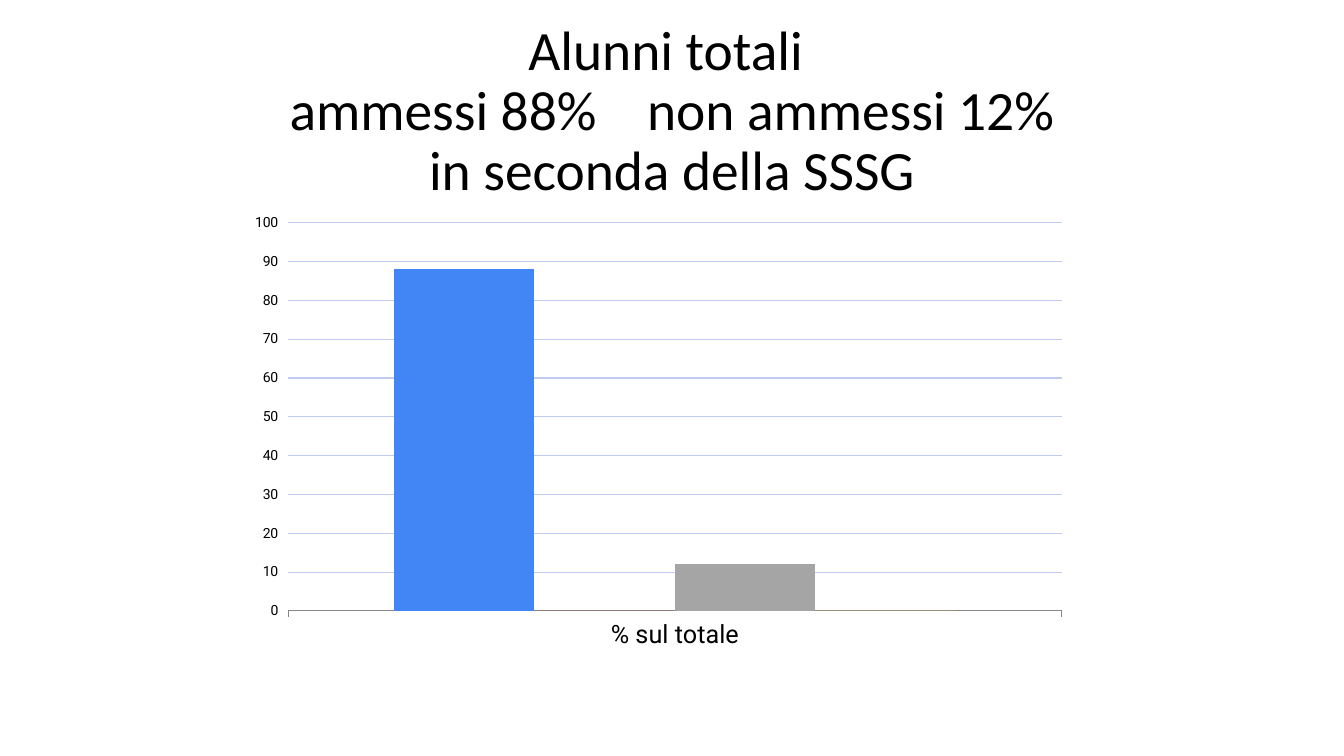
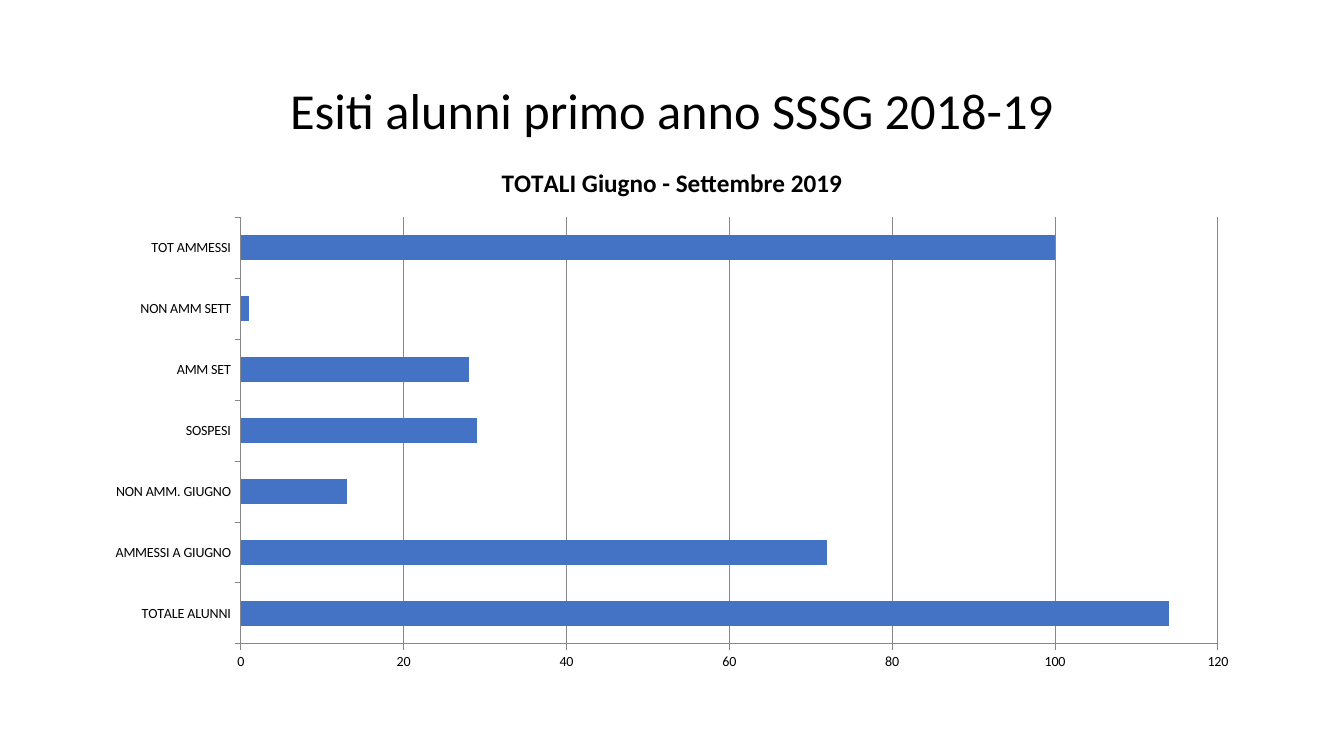
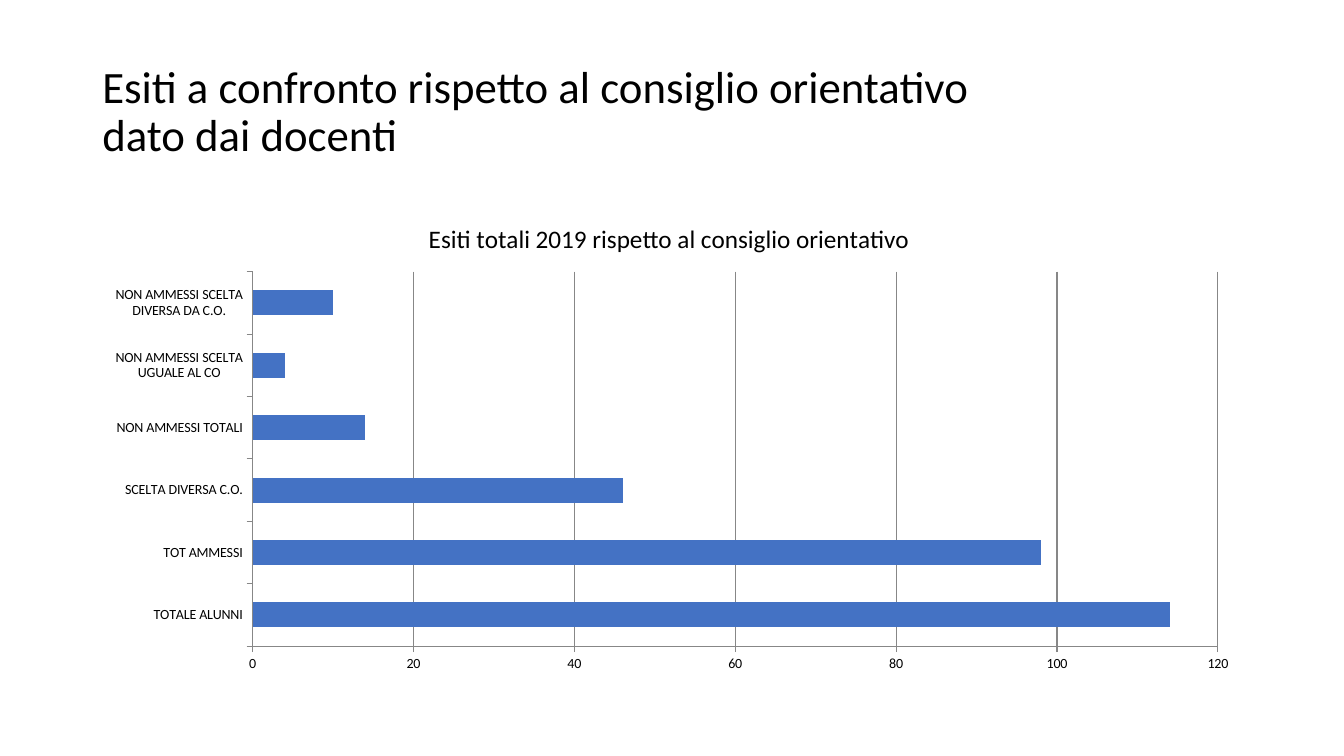
from dataclasses import dataclass

from pptx import Presentation
from pptx.chart.data import CategoryChartData
from pptx.dml.color import RGBColor
from pptx.enum.chart import XL_CHART_TYPE, XL_TICK_MARK
from pptx.enum.text import MSO_ANCHOR, PP_ALIGN
from pptx.util import Pt

COLUMN, BAR = XL_CHART_TYPE.COLUMN_CLUSTERED, XL_CHART_TYPE.BAR_CLUSTERED
OUTSIDE = XL_TICK_MARK.OUTSIDE
LEFT, CENTER = PP_ALIGN.LEFT, PP_ALIGN.CENTER
MIDDLE = MSO_ANCHOR.MIDDLE
PX = 9525


@dataclass(frozen=True)
class Theme:
    font: str = "Calibri"
    column_font: str = "Roboto"
    ink: str = "000000"
    axis: str = "878787"
    column_grid: str = "C0CBF0"
    column_fills: tuple = ("4285F4", "DB4437", "A5A5A5", "FFC000")
    bar_fills: tuple = ("4472C4",)
    label_size: int = 10
    heading_size: int = 18
    line_width: float = 0.75
    line_spacing: float = 0.9
    gap_spacing: int = 2700


T = Theme()


def style_font(font, size, name=T.font, bold=False):
    font.name, font.size, font.bold = name, Pt(size), bold
    font.color.rgb = RGBColor.from_string(T.ink)


def add_text(s, text, *, box, size, align):
    sp = s.shapes.add_textbox(*(n * PX for n in box))
    tf = sp.text_frame
    tf.word_wrap, tf.vertical_anchor = True, MIDDLE
    p = tf.paragraphs[0]
    p.alignment, p.line_spacing = align, T.line_spacing
    for i, line in enumerate(text.split("\n")):
        if i:
            p.add_line_break()
        for j, part in enumerate(line.split("\t")):
            if j:
                gap = p.add_run()
                gap.text = " "
                style_font(gap.font, size)
                gap._r.get_or_add_rPr().set("spc", str(T.gap_spacing))
            r = p.add_run()
            r.text = part
            style_font(r.font, size)


TITLE_BOX = (88, 38, 1104, 139)
slides = [
    dict(title="Alunni totali \nammessi 88%\tnon ammessi 12%\nin seconda della SSSG",
         size=39.6, align=CENTER, kind=COLUMN, box=(227, 196, 800, 432),
         heading=None, bold=False, top=100, step=10,
         font=T.column_font, cat_size=18, grid=T.column_grid, fills=T.column_fills,
         cats=["% sul totale"], series=[[88], [0], [12], [0]]),
    dict(title="Esiti alunni primo anno SSSG 2018-19",
         size=36, align=CENTER, kind=BAR, box=(88, 138, 1104, 510),
         heading="TOTALI Giugno - Settembre 2019", bold=True, top=120, step=20,
         font=T.font, cat_size=T.label_size, grid=T.axis, fills=T.bar_fills,
         cats=["TOTALE ALUNNI", "AMMESSI A GIUGNO", "NON AMM. GIUGNO", "SOSPESI",
               "AMM SET", "NON AMM SETT", "TOT AMMESSI"],
         series=[[114, 72, 13, 29, 28, 1, 100]]),
    dict(title="Esiti a confronto rispetto al consiglio orientativo \ndato dai docenti",
         size=32, align=LEFT, kind=BAR, box=(88, 192, 1104, 457),
         heading="Esiti totali 2019 rispetto al consiglio orientativo ", bold=False,
         top=120, step=20,
         font=T.font, cat_size=T.label_size, grid=T.axis, fills=T.bar_fills,
         cats=["TOTALE ALUNNI", "TOT AMMESSI", "SCELTA DIVERSA C.O.",
               "NON AMMESSI TOTALI", "NON AMMESSI SCELTA UGUALE AL CO",
               "NON AMMESSI SCELTA DIVERSA DA C.O."],
         series=[[114, 98, 46, 14, 4, 10]]),
]

prs = Presentation()
prs.slide_width, prs.slide_height = 1280 * PX, 720 * PX

for d in slides:
    s = prs.slides.add_slide(prs.slide_layouts[6])
    add_text(s, d["title"], box=TITLE_BOX, size=d["size"], align=d["align"])

    data = CategoryChartData()
    data.categories = d["cats"]
    for i, values in enumerate(d["series"], 1):
        data.add_series(f"Series {i}", values)
    chart = s.shapes.add_chart(d["kind"], *(n * PX for n in d["box"]), data).chart
    style_font(chart.font, T.label_size)
    chart.has_legend = False
    chart.has_title = d["heading"] is not None
    if chart.has_title:
        r = chart.chart_title.text_frame.paragraphs[0].add_run()
        r.text = d["heading"]
        style_font(r.font, T.heading_size, bold=d["bold"])

    plot = chart.plots[0]
    plot.gap_width, plot.overlap, plot.vary_by_categories = 150, 0, False
    for series, color in zip(plot.series, d["fills"]):
        series.format.fill.solid()
        series.format.fill.fore_color.rgb = RGBColor.from_string(color)

    cat, val = chart.category_axis, chart.value_axis
    val.minimum_scale, val.maximum_scale, val.major_unit = 0, d["top"], d["step"]
    val.has_major_gridlines = True
    for axis, size in ((cat, d["cat_size"]), (val, T.label_size)):
        axis.major_tick_mark = OUTSIDE
        style_font(axis.tick_labels.font, size, d["font"])
    for part, color in ((cat, T.axis), (val, T.axis), (val.major_gridlines, d["grid"])):
        part.format.line.color.rgb = RGBColor.from_string(color)
        part.format.line.width = Pt(T.line_width)
    if d["kind"] == COLUMN:
        val.format.line.fill.background()

prs.save("out.pptx")
